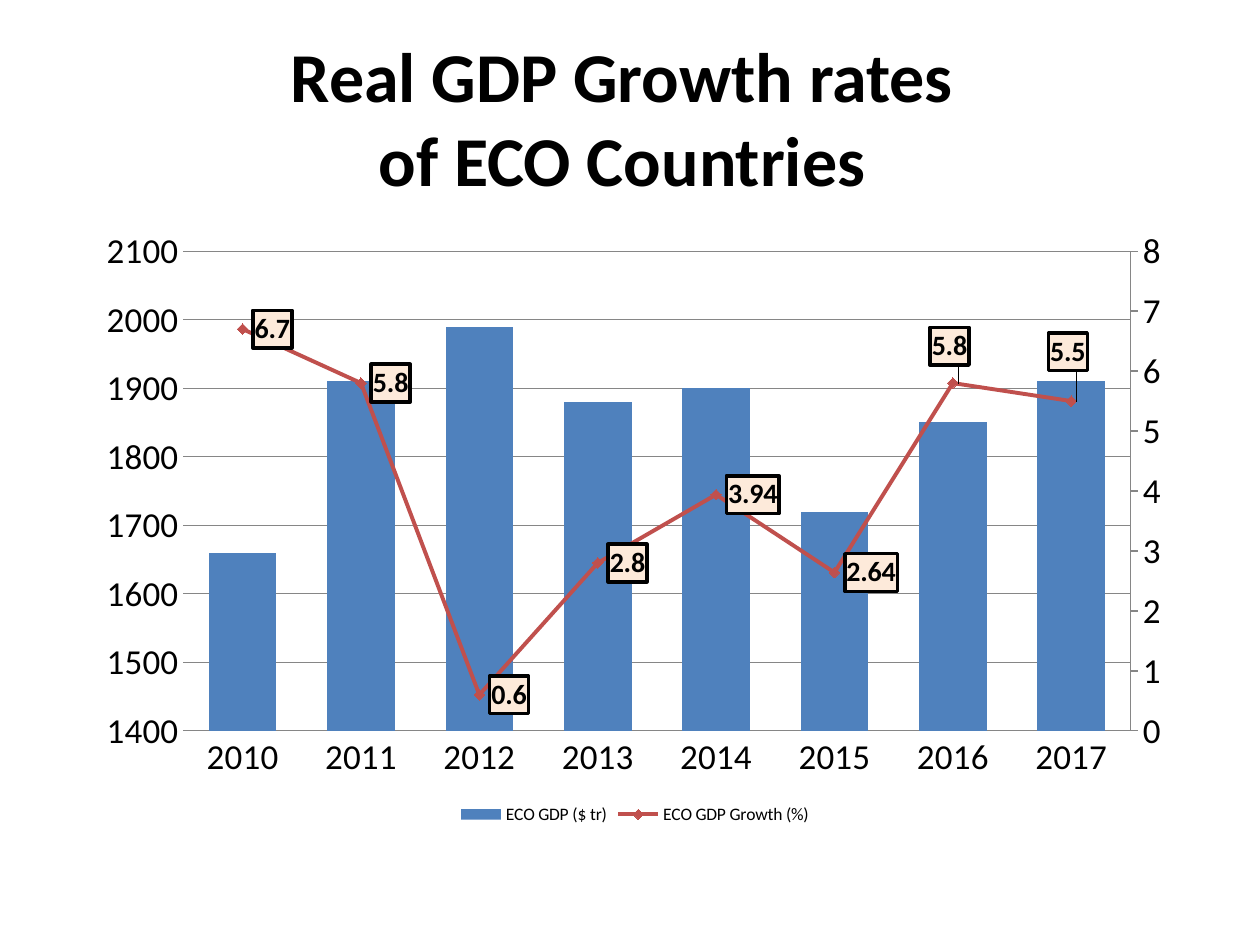
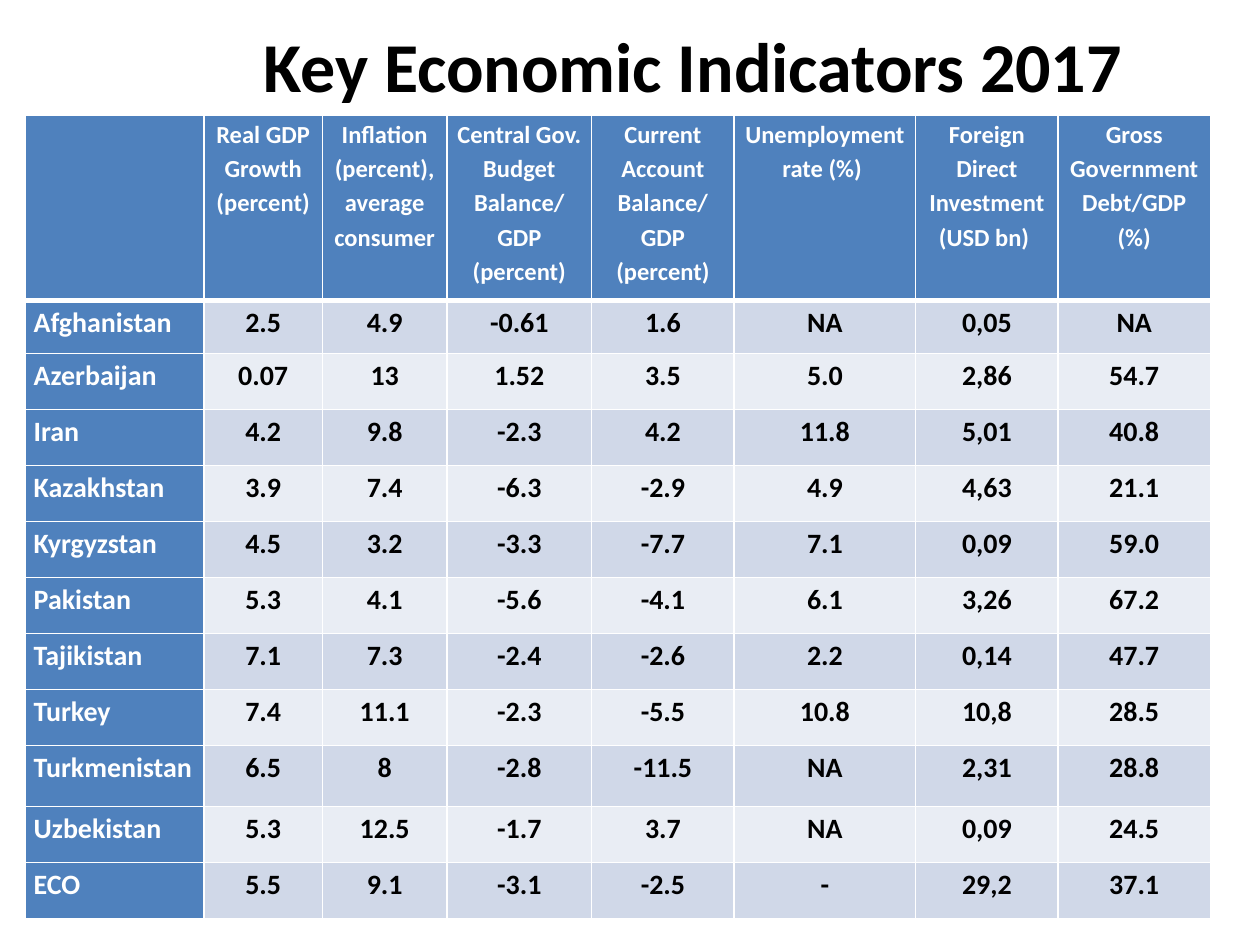
import copy

import pptx
import pptx.chart.axis
import pptx.chart.data
import pptx.dml.color
import pptx.enum.chart
import pptx.enum.text
import pptx.oxml
import pptx.oxml.ns
import pptx.util
from lxml import etree

Cm, Pt = pptx.util.Cm, pptx.util.Pt
qn = pptx.oxml.ns.qn
MIDDLE = pptx.enum.text.MSO_ANCHOR.MIDDLE
CENTER = pptx.enum.text.PP_ALIGN.CENTER
LEFT = pptx.enum.text.PP_ALIGN.LEFT
TICK = pptx.enum.chart.XL_TICK_MARK

# Shared look
FACE = "Calibri"
BLUE, RED, BLACK, WHITE, GRAY = "4F81BD", "C0504D", "000000", "FFFFFF", "868686"
BANDS = ("D0D8E8", "E9EDF4")

# Growth slide
YEARS = [str(year) for year in range(2010, 2018)]
GDP = ("ECO GDP ($ tr)", [1660, 1910, 1990, 1880, 1900, 1720, 1850, 1910])
GROWTH = ("ECO GDP Growth (%)", [6.7, 5.8, 0.6, 2.8, 3.94, 2.64, 5.8, 5.5])
SHIFTS = {6: (-0.03, -0.06), 7: (-0.03, -0.08)}  # labels moved off the line
PLOT = {"x": 0.09, "y": 0.06, "w": 0.86, "h": 0.78}

# Indicator slide
HEADS = [
    "", "Real GDP Growth (percent)", "Inflation (percent), average consumer",
    "Central Gov. Budget Balance/\nGDP (percent)",
    "Current Account Balance/\nGDP (percent)", "Unemployment rate (%) ",
    "Foreign Direct Investment (USD bn) ", "Gross Government Debt/GDP (%)",
]
ROWS = [
    ("Afghanistan", "2.5", "4.9", "-0.61", "1.6", "NA", "0,05", "NA"),
    ("Azerbaijan", "0.07", "13", "1.52", "3.5", "5.0", "2,86", "54.7"),
    ("Iran", "4.2", "9.8", "-2.3", "4.2", "11.8", "5,01", "40.8"),
    ("Kazakhstan", "3.9", "7.4", "-6.3", "-2.9", "4.9", "4,63", "21.1"),
    ("Kyrgyzstan", "4.5", "3.2", "-3.3", "-7.7", "7.1", "0,09", "59.0"),
    ("Pakistan", "5.3", "4.1", "-5.6", "-4.1", "6.1", "3,26", "67.2"),
    ("Tajikistan", "7.1", "7.3", "-2.4", "-2.6", "2.2", "0,14", "47.7"),
    ("Turkey", "7.4", "11.1", "-2.3", "-5.5", "10.8", "10,8", "28.5"),
    ("Turkmenistan", "6.5", "8", "-2.8", "-11.5", "NA", "2,31", "28.8"),
    ("Uzbekistan", "5.3", "12.5", "-1.7", "3.7", "NA", "0,09", "24.5"),
    ("ECO", "5.5", "9.1", "-3.1", "-2.5", "-", "29,2", "37.1"),
]
WIDTHS = [3.61, 2.39, 2.51, 2.92, 2.87, 3.66, 2.87, 3.07]
HEIGHTS = [3.73, 1.07] + [1.13] * 7 + [1.22] + [1.13] * 2


def rgb(code):
    return pptx.dml.color.RGBColor.from_string(code)


def style(font, size, color=BLACK, bold=False):
    font.name, font.size, font.bold = FACE, Pt(size), bold
    font.color.rgb = rgb(color)


def stroke(line, color, width):
    line.color.rgb = rgb(color)
    line.width = Pt(width)


def add_page(deck, title, left, top):
    page = deck.slides.add_slide(deck.slide_layouts[6])
    frame = page.shapes.add_textbox(Cm(left), Cm(top), Cm(22.86), Cm(3.18)).text_frame
    frame.word_wrap, frame.vertical_anchor = True, MIDDLE
    para = frame.paragraphs[0]
    para.text, para.alignment = title, CENTER
    style(para.font, 40, bold=True)
    return page


def chart_xml(text):
    return pptx.oxml.parse_xml(text.replace(">", f" {pptx.oxml.ns.nsdecls('c', 'a')}>", 1))


def layout_xml(places, inner=False):
    target = '<c:layoutTarget val="inner"/>' if inner else ""
    modes = '<c:xMode val="edge"/><c:yMode val="edge"/>' if inner else ""
    sides = "".join(f'<c:{key} val="{val}"/>' for key, val in places.items())
    return f"<c:layout><c:manualLayout>{target}{modes}{sides}</c:manualLayout></c:layout>"


def label_xml():
    """Boxed value labels to the right of each point, some of them shifted."""
    def fill(color):
        return f'<a:solidFill><a:srgbClr val="{color}"/></a:solidFill>'

    shows = "".join(f'<c:show{key} val="{int(key == "Val")}"/>' for key in
                    ("LegendKey", "Val", "CatName", "SerName", "Percent", "BubbleSize"))
    box = (f'<c:spPr>{fill("FDEADA")}<a:ln w="25400">{fill(BLACK)}</a:ln></c:spPr>'
           f'<c:txPr><a:bodyPr/><a:p><a:pPr><a:defRPr sz="1600" b="1">{fill(BLACK)}'
           f'<a:latin typeface="{FACE}"/></a:defRPr></a:pPr><a:endParaRPr/></a:p></c:txPr>'
           f'<c:dLblPos val="r"/>{shows}')
    moved = "".join(
        f'<c:dLbl><c:idx val="{idx}"/>{layout_xml({"x": x, "y": y})}{box}</c:dLbl>'
        for idx, (x, y) in SHIFTS.items())
    return f"<c:dLbls>{moved}{box}</c:dLbls>"


def split_line(chart):
    """Move the second series to a line plot on a right-hand axis."""
    bars = chart.plots[0]._element
    cat, val = chart.category_axis._element, chart.value_axis._element
    ser = bars.findall(qn("c:ser"))[1]
    for flag in ser.findall(qn("c:invertIfNegative")):
        ser.remove(flag)
    line = chart_xml('<c:lineChart><c:grouping val="standard"/><c:varyColors val="0"/>'
                     '<c:marker val="1"/><c:axId val="501"/><c:axId val="502"/></c:lineChart>')
    line.insert(2, ser)
    bars.addnext(line)
    ser.find(qn("c:cat")).addprevious(chart_xml(label_xml()))

    cat2, val2 = copy.deepcopy(cat), copy.deepcopy(val)
    for axis, own, other in ((cat2, "501", "502"), (val2, "502", "501")):
        axis.find(qn("c:axId")).set("val", own)
        axis.find(qn("c:crossAx")).set("val", other)
    val2.find(qn("c:axPos")).set("val", "r")
    val2.find(qn("c:crosses")).set("val", "max")
    val.addnext(val2)
    val2.addnext(cat2)
    pptx.chart.axis.CategoryAxis(cat2).visible = False
    return pptx.chart.axis.ValueAxis(val2)


def scale(axis, low, high, step):
    axis.minimum_scale, axis.maximum_scale, axis.major_unit = low, high, step


def add_growth(page):
    data = pptx.chart.data.CategoryChartData()
    data.categories = YEARS
    for name, vals in (GDP, GROWTH):
        data.add_series(name, vals)
    kind = pptx.enum.chart.XL_CHART_TYPE.COLUMN_CLUSTERED
    chart = page.shapes.add_chart(kind, Cm(1.7), Cm(4.32), Cm(22.2), Cm(12.4), data).chart
    style(chart.font, 10)
    chart.has_title = False
    chart.has_legend = True
    chart.legend.position = pptx.enum.chart.XL_LEGEND_POSITION.BOTTOM
    chart.legend.include_in_layout = False

    # Axes
    left = chart.value_axis
    for axis in (chart.category_axis, left):
        axis.major_tick_mark = axis.minor_tick_mark = TICK.NONE
        style(axis.tick_labels.font, 20)
        stroke(axis.format.line, GRAY, 0.75)
    left.has_major_gridlines = True
    stroke(left.major_gridlines.format.line, GRAY, 0.75)
    right = split_line(chart)
    right.has_major_gridlines = False
    right.major_tick_mark = TICK.OUTSIDE
    left.format.line.fill.background()
    scale(left, 1400, 2100, 100)
    scale(right, 0, 8, 1)

    # Series
    bars, line = chart.plots
    bars.gap_width, bars.vary_by_categories = 75, False
    fill = bars.series[0].format.fill
    fill.solid()
    fill.fore_color.rgb = rgb(BLUE)
    trend = line.series[0]
    trend.smooth = False
    stroke(trend.format.line, RED, 2.25)
    trend.marker.style = pptx.enum.chart.XL_MARKER_STYLE.DIAMOND
    trend.marker.size = 6
    trend.marker.format.fill.solid()
    trend.marker.format.fill.fore_color.rgb = rgb(RED)
    stroke(trend.marker.format.line, RED, 0.75)

    # Plot area
    area = bars._element.getparent()
    for old in area.findall(qn("c:layout")):
        area.remove(old)
    area.insert(0, chart_xml(layout_xml(PLOT, inner=True)))


def add_edges(cell, **widths):
    props = cell._tc.get_or_add_tcPr()
    for side in "LRTB":
        edge = etree.SubElement(props, qn(f"a:ln{side}"), w=str(Pt(widths.get(side, 1))))
        fill = etree.SubElement(edge, qn("a:solidFill"))
        etree.SubElement(fill, qn("a:srgbClr"), val=WHITE)


def fill_cell(cell, text, row, col):
    head, name = row == 0, col == 0
    add_edges(cell, **({"B": 3} if head else {"T": 3} if row == 1 else {}))
    cell.fill.solid()
    cell.fill.fore_color.rgb = rgb(BLUE if head or name else BANDS[(row - 1) % 2])
    cell.margin_left = cell.margin_right = Cm(0.18)
    cell.margin_top = cell.margin_bottom = 0
    cell.text_frame.text = text
    for para in cell.text_frame.paragraphs:
        para.alignment = LEFT if name else CENTER
        para.line_spacing = 1.15
        style(para.font, 14 if head else 16, WHITE if head or name else BLACK, True)


def add_grid(page):
    grid = page.shapes.add_table(len(HEIGHTS), len(WIDTHS), Cm(0.5), Cm(2.33),
                                 Cm(sum(WIDTHS)), Cm(sum(HEIGHTS))).table
    grid.first_row = grid.horz_banding = False
    for col, width in zip(grid.columns, WIDTHS):
        col.width = Cm(width)
    for line, height in zip(grid.rows, HEIGHTS):
        line.height = Cm(height)
    for row, texts in enumerate([HEADS, *ROWS]):
        for col, text in enumerate(texts):
            fill_cell(grid.cell(row, col), text, row, col)


def main():
    deck = pptx.Presentation()
    deck.slide_width, deck.slide_height = Cm(25.4), Cm(19.05)
    add_growth(add_page(deck, "Real GDP Growth rates \nof ECO Countries ", 1.27, 0.76))
    add_grid(add_page(deck, "Key Economic Indicators 2017", 2.54, -0.28))
    deck.save("out.pptx")


if __name__ == "__main__":
    main()
